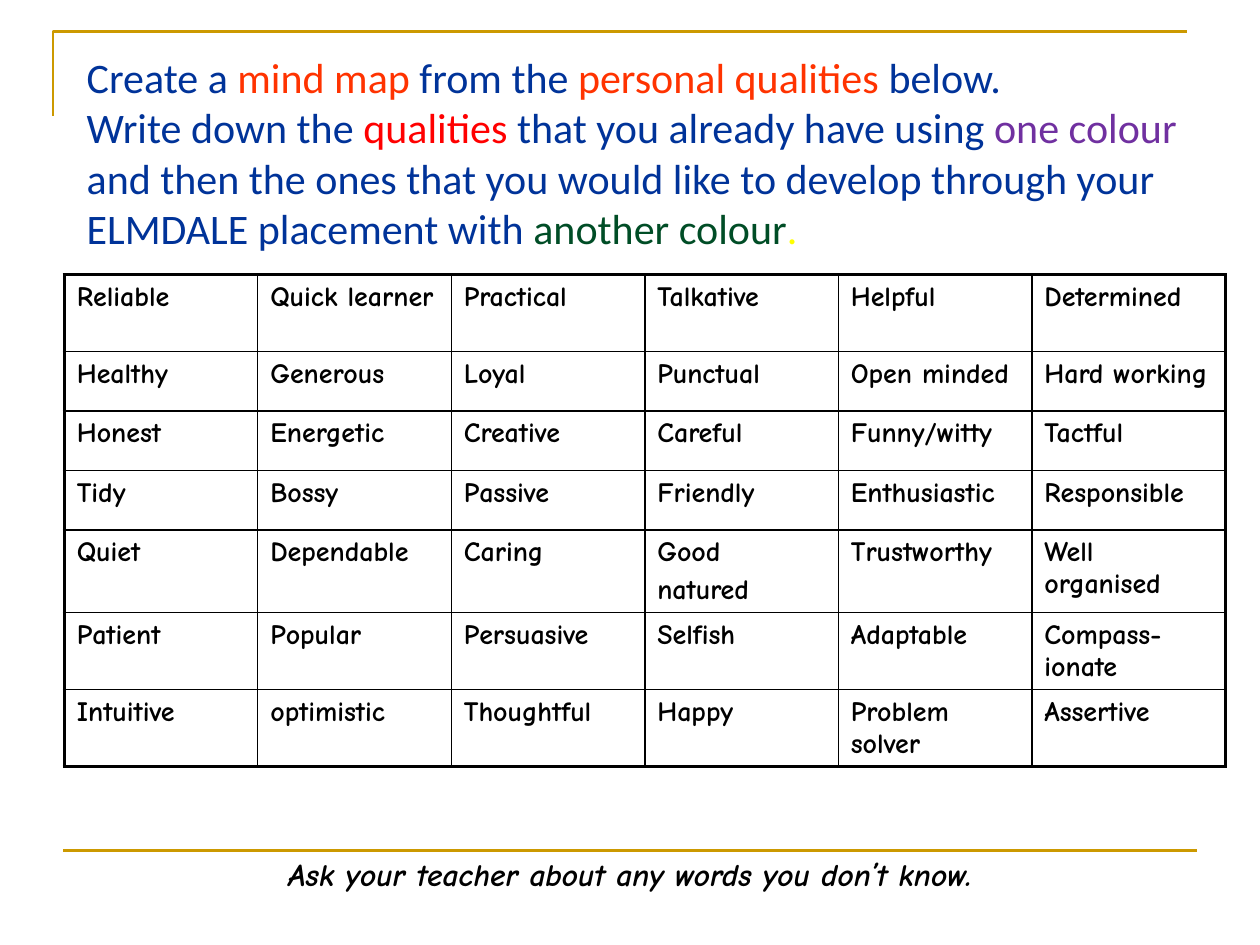
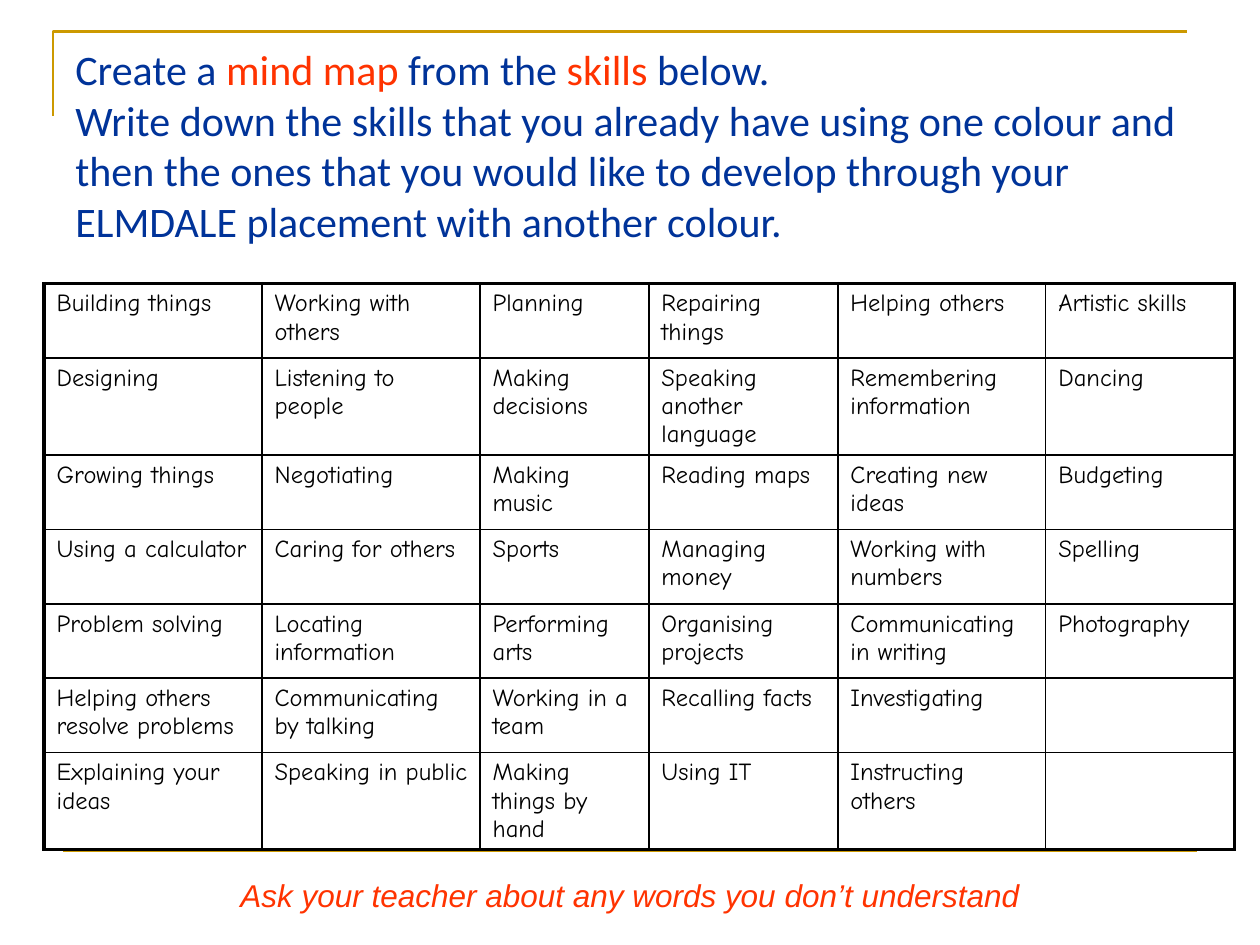
from lxml.etree import SubElement
from pptx import Presentation
from pptx.dml.color import RGBColor
from pptx.enum.shapes import MSO_CONNECTOR
from pptx.enum.text import PP_ALIGN
from pptx.oxml.ns import qn
from pptx.util import Inches, Pt

WIDTH, HEIGHT = Inches(10), Inches(7.5)
BLACK, BLUE, ORANGE, RED = "000000", "003399", "FF3300", "FF0000"
GOLD, PURPLE, GREEN, YELLOW = "CC9900", "7030A0", "004D26", "FFFF00"
HAND, HEADING, PLAIN = "Comic Neue", "Calibri", "Arial"
THIN, THICK = Pt(1), Pt(2.25)

QUALITIES = [
    ["Reliable", "Quick learner", "Practical", "Talkative", "Helpful", "Determined"],
    ["Healthy", "Generous", "Loyal", "Punctual", "Open minded", "Hard working"],
    ["Honest", "Energetic", "Creative", "Careful", "Funny/witty", "Tactful"],
    ["Tidy", "Bossy", "Passive", "Friendly", "Enthusiastic", "Responsible"],
    ["Quiet", "Dependable", "Caring", "Good\nnatured", "Trustworthy", "Well organised"],
    ["Patient", "Popular", "Persuasive", "Selfish", "Adaptable", "Compass-ionate"],
    ["Intuitive", "optimistic", "Thoughtful", "Happy", "Problem solver", "Assertive"],
]
SKILLS = [
    ["Building things", "Working with others", "Planning", "Repairing things",
     "Helping others", "Artistic skills"],
    ["Designing", "Listening to people", "Making decisions", "Speaking another language",
     "Remembering information", "Dancing"],
    ["Growing things", "Negotiating", "Making music", "Reading maps",
     "Creating new ideas", "Budgeting"],
    ["Using a calculator", "Caring for others", "Sports", "Managing money",
     "Working with numbers", "Spelling"],
    ["Problem solving", "Locating information", "Performing arts", "Organising projects",
     "Communicating in writing", "Photography"],
    ["Helping others resolve problems", "Communicating by talking", "Working in a team",
     "Recalling facts", "Investigating", ""],
    ["Explaining your ideas", "Speaking in public", "Making things by hand", "Using IT",
     "Instructing others", ""],
]
QUALITIES_TASK = [
    ("Create a ", BLUE), ("mind map", ORANGE), (" from the ", BLUE),
    ("personal qualities", ORANGE), (" below.\nWrite down the ", BLUE),
    ("qualities", RED), (" that you already have using ", BLUE),
    ("one colour ", PURPLE),
    ("and then the ones that you would like to develop through your "
     "ELMDALE placement with ", BLUE),
    ("another colour", GREEN), (".", YELLOW),
]
SKILLS_TASK = [
    ("Create a ", BLUE), ("mind map", ORANGE), (" from the ", BLUE), ("skills", ORANGE),
    (" below.\nWrite down the skills that you already have using one colour and then "
     "the ones that you would like to develop through your ELMDALE placement with "
     "another colour.", BLUE),
]


def across(percent):
    return round(WIDTH * percent / 100)


def down(percent):
    return round(HEIGHT * percent / 100)


def rgb(value):
    return RGBColor.from_string(value)


def set_font(font, name, size, colour=None, bold=False, italic=False):
    font.name, font.size, font.bold, font.italic = name, Pt(size), bold, italic
    if colour:
        font.color.rgb = rgb(colour)


def style_rule(line):
    line.color.rgb = rgb(GOLD)
    line.width = Pt(1.5)


def add_frame(slide):
    """Draw the gold corner at the top and the gold rule at the foot."""
    left, top = across(4.2), down(3.33)
    builder = slide.shapes.build_freeform(left, down(12.27))
    builder.add_line_segments([(left, top), (across(94.2), top)], close=False)
    corner = builder.convert_to_shape()
    corner.fill.background()
    corner.shadow.inherit = False
    style_rule(corner.line)

    rule = slide.shapes.add_connector(
        MSO_CONNECTOR.STRAIGHT, across(5), down(90), across(95), down(90))
    SubElement(rule._element.spPr, qn("a:effectLst"))
    style_rule(rule.line)


def add_text_area(slide, left, top, width, height):
    area = slide.shapes.add_textbox(across(left), down(top), across(width), down(height))
    area.text_frame.word_wrap = True
    return area.text_frame.paragraphs[0]


def add_task(slide, left, top, width, phrases):
    """Write the heading from (text, colour) phrases; a newline breaks the line."""
    task = add_text_area(slide, left, top, width, 23)
    set_font(task.font, HEADING, 24)
    for text, colour in phrases:
        for number, part in enumerate(text.split("\n")):
            if number:
                task.add_line_break()
            run = task.add_run()
            run.text = part
            run.font.color.rgb = rgb(colour)


def add_reminder(slide, left, top, width, text, name, colour, bold):
    reminder = add_text_area(slide, left, top, width, 5.33)
    reminder.text = text
    reminder.alignment = PP_ALIGN.CENTER
    set_font(reminder.font, name, 18, colour, bold, italic=True)


def set_borders(cell, outer):
    """Rule all four sides, thicker on those named in outer."""
    properties = cell._tc.get_or_add_tcPr()
    for position, side in enumerate("LRTB"):
        line = SubElement(properties, qn(f"a:ln{side}"),
                          w=str(THICK if side in outer else THIN))
        fill = SubElement(line, qn("a:solidFill"))
        SubElement(fill, qn("a:srgbClr"), val=BLACK)
        properties.insert(position, line)


def add_word_grid(slide, left, top, widths, heights, words, size, bold=False):
    table = slide.shapes.add_table(
        len(heights), len(widths), across(left), down(top),
        across(sum(widths)), down(sum(heights))).table
    table.first_row = table.horz_banding = False
    for column, width in zip(table.columns, widths):
        column.width = across(width)
    last_row, last_column = len(heights) - 1, len(widths) - 1
    for r, (height, row_words) in enumerate(zip(heights, words)):
        table.rows[r].height = down(height)
        for c, word in enumerate(row_words):
            cell = table.cell(r, c)
            cell.text = word
            cell.fill.background()
            for number, paragraph in enumerate(cell.text_frame.paragraphs):
                if number:
                    paragraph.space_before = Pt(size * 0.2)
                set_font(paragraph.font, HAND, size, BLACK, bold)
            edges = {"L": c == 0, "R": c == last_column, "T": r == 0, "B": r == last_row}
            set_borders(cell, [side for side, outer in edges.items() if outer])


def add_framed_slide(deck):
    slide = deck.slides.add_slide(deck.slide_layouts[6])
    add_frame(slide)
    return slide


def main():
    deck = Presentation()
    deck.slide_width, deck.slide_height = WIDTH, HEIGHT

    qualities = add_framed_slide(deck)
    short, middle, tall = 6.3, 8.13, 8.75
    add_word_grid(qualities, 5.1, 29.07, [15.36] * 6,
                  [middle, short, short, short, tall, middle, middle],
                  QUALITIES, 16, bold=True)
    add_reminder(qualities, 5.1, 89.87, 89.8,
                 "Ask your teacher about any words you don’t know.", HAND, BLACK, True)
    add_task(qualities, 5.9, 4.8, 91.4, QUALITIES_TASK)

    skills = add_framed_slide(deck)
    two_lines, three_lines = 7.87, 10.27
    add_word_grid(skills, 3.5, 30, [17.3, 17.3, 13.4, 15, 16.5, 15],
                  [two_lines, three_lines] + [two_lines] * 4 + [three_lines], SKILLS, 14)
    add_task(skills, 5, 4, 90, SKILLS_TASK)
    add_reminder(skills, 0, 92, 100,
                 "Ask your teacher about any words you don’t understand", PLAIN, ORANGE, False)

    deck.save("out.pptx")


if __name__ == "__main__":
    main()
